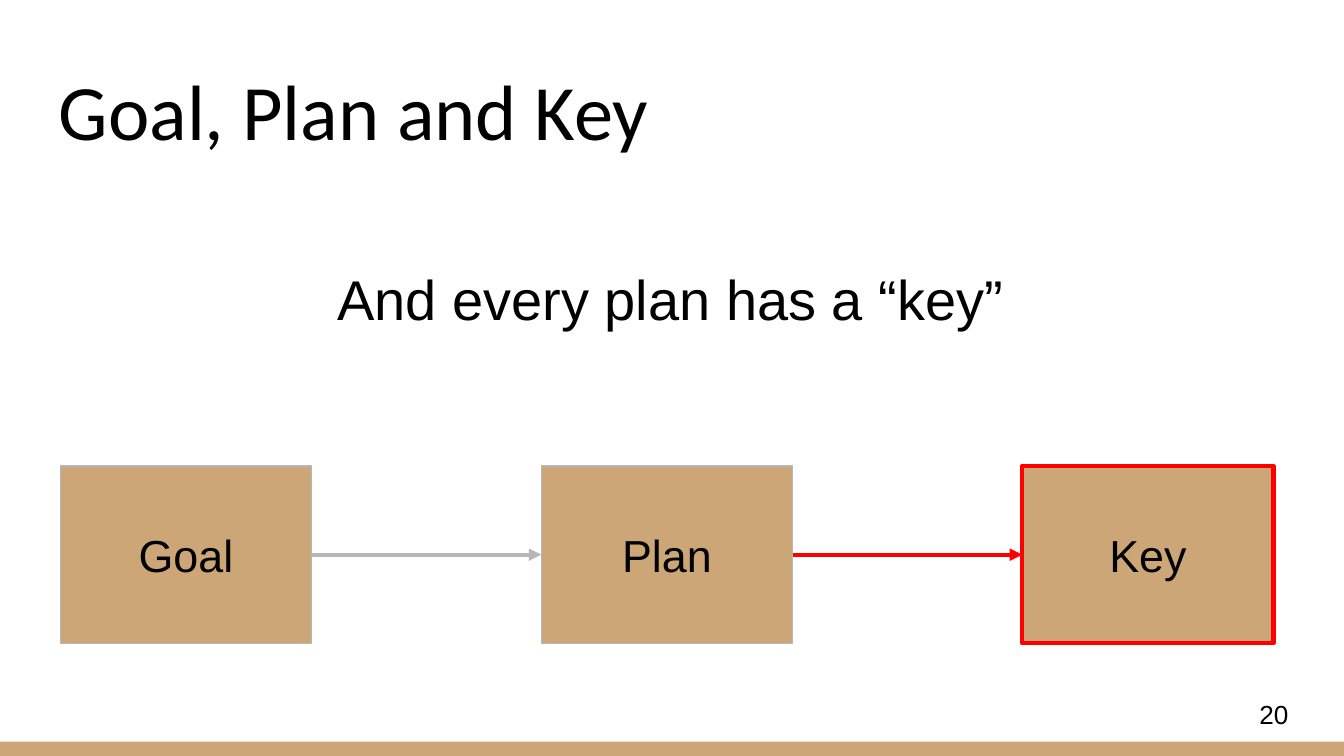
from dataclasses import dataclass

from lxml.etree import SubElement
from pptx import Presentation
from pptx.dml.color import RGBColor
from pptx.enum.shapes import MSO_CONNECTOR, MSO_SHAPE
from pptx.enum.text import MSO_ANCHOR, MSO_AUTO_SIZE, PP_ALIGN
from pptx.oxml.ns import qn
from pptx.shapes.autoshape import Shape
from pptx.shapes.connector import Connector
from pptx.slide import Slide
from pptx.util import Cm, Pt


@dataclass(frozen=True)
class Theme:
    tan: RGBColor = RGBColor(0xCC, 0xA6, 0x77)
    grey: RGBColor = RGBColor(0xB7, 0xB7, 0xB7)
    red: RGBColor = RGBColor(0xFF, 0x00, 0x00)
    black: RGBColor = RGBColor(0x00, 0x00, 0x00)
    title_font: str = "Calibri"
    body_font: str = "Arial"
    title_size: int = 42
    statement_size: int = 30
    step_size: int = 24
    number_size: int = 14
    thin_line: float = 0.75
    thick_line: float = 2.25
    inset: float = 0.25


@dataclass(frozen=True)
class Area:
    left: float
    top: float
    width: float
    height: float

    def lengths(self) -> tuple[Cm, Cm, Cm, Cm]:
        return Cm(self.left), Cm(self.top), Cm(self.width), Cm(self.height)


@dataclass(frozen=True)
class Step:
    label: str
    line_color: RGBColor
    line_width: float


THEME = Theme()
FIRST_STEP = Area(1.14, 8.81, 4.75, 3.35)
STEP_PITCH = 9.09
STEPS = (
    Step("Goal", THEME.grey, THEME.thin_line),
    Step("Plan", THEME.grey, THEME.thin_line),
    Step("Key", THEME.red, THEME.thick_line),
)
ARROW_COLORS = (THEME.grey, THEME.red)


def write_text(shape: Shape, text: str, size: int, font_name: str = THEME.body_font,
               anchor: MSO_ANCHOR = MSO_ANCHOR.MIDDLE,
               alignment: PP_ALIGN = PP_ALIGN.CENTER) -> None:
    """Fill a shape with one formatted paragraph."""
    frame = shape.text_frame
    inset = Cm(THEME.inset)
    frame_format = {
        "word_wrap": True, "auto_size": MSO_AUTO_SIZE.NONE, "vertical_anchor": anchor,
        "margin_left": inset, "margin_right": inset,
        "margin_top": inset, "margin_bottom": inset,
    }
    for name, value in frame_format.items():
        setattr(frame, name, value)
    paragraph = frame.paragraphs[0]
    paragraph.alignment = alignment
    run = paragraph.add_run()
    run.text = text
    for name, value in {"name": font_name, "size": Pt(size)}.items():
        setattr(run.font, name, value)
    run.font.color.rgb = THEME.black


def add_rectangle(slide: Slide, area: Area) -> Shape:
    rectangle = slide.shapes.add_shape(MSO_SHAPE.RECTANGLE, *area.lengths())
    rectangle.shadow.inherit = False
    rectangle.fill.solid()
    rectangle.fill.fore_color.rgb = THEME.tan
    rectangle.line.fill.background()
    return rectangle


def add_step(slide: Slide, step: Step, index: int) -> Shape:
    area = Area(FIRST_STEP.left + index * STEP_PITCH, FIRST_STEP.top,
                FIRST_STEP.width, FIRST_STEP.height)
    box = add_rectangle(slide, area)
    box.line.color.rgb = step.line_color
    box.line.width = Pt(step.line_width)
    write_text(box, step.label, THEME.step_size)
    return box


def add_arrow(slide: Slide, start: Shape, end: Shape, color: RGBColor) -> Connector:
    """Join the right side of one box to the left side of the next."""
    arrow = slide.shapes.add_connector(MSO_CONNECTOR.STRAIGHT, 0, 0, 0, 0)
    arrow.begin_connect(start, 3)
    arrow.end_connect(end, 1)
    arrow.line.color.rgb = color
    arrow.line.width = Pt(THEME.thick_line)
    SubElement(arrow.line._get_or_add_ln(), qn("a:tailEnd"), type="triangle")
    SubElement(arrow._element.spPr, qn("a:effectLst"))
    return arrow


def main() -> None:
    presentation = Presentation()
    presentation.slide_width, presentation.slide_height = Cm(25.4), Cm(14.29)
    slide = presentation.slides.add_slide(presentation.slide_layouts[5])

    # Footer band
    add_rectangle(slide, Area(0, 14.02, 25.4, 0.27))

    # Title
    title = slide.shapes.title
    title_area = Area(0.86, 0.89, 23.67, 2.31)
    for name, value in zip(("left", "top", "width", "height"), title_area.lengths()):
        setattr(title, name, value)
    write_text(title, "Goal, Plan and Key", THEME.title_size, THEME.title_font,
               MSO_ANCHOR.BOTTOM, PP_ALIGN.LEFT)

    # Statement
    statement = slide.shapes.add_textbox(*Area(3.96, 4.75, 17.42, 2.62).lengths())
    write_text(statement, "And every plan has a “key”", THEME.statement_size,
               anchor=MSO_ANCHOR.TOP)

    # Chain of steps
    boxes = [add_step(slide, step, index) for index, step in enumerate(STEPS)]
    for start, end, color in zip(boxes, boxes[1:], ARROW_COLORS):
        add_arrow(slide, start, end, color)

    # Slide number
    number = slide.shapes.add_textbox(*Area(23.55, 12.95, 1.52, 1.09).lengths())
    write_text(number, "20", THEME.number_size, alignment=PP_ALIGN.LEFT)

    presentation.save("out.pptx")


if __name__ == "__main__":
    main()
